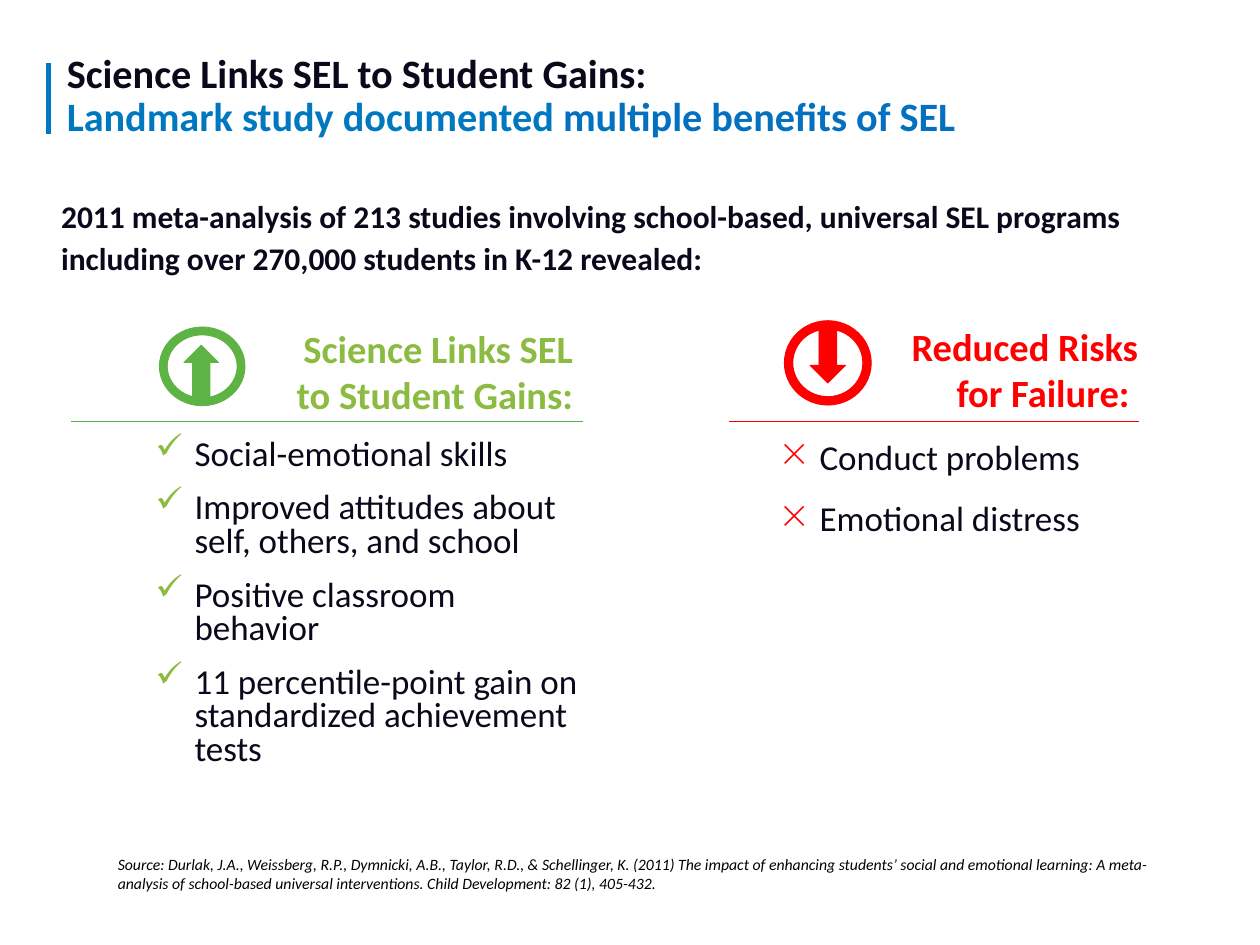
from pptx import Presentation
from pptx.dml.color import RGBColor
from pptx.enum.shapes import MSO_CONNECTOR, MSO_SHAPE
from pptx.enum.text import MSO_ANCHOR, MSO_AUTO_SIZE, PP_ALIGN
from pptx.oxml.ns import qn
from pptx.util import Inches, Pt
from lxml import etree

INK = RGBColor(0x0A, 0x09, 0x1B)
BLACK = RGBColor(0x00, 0x00, 0x00)
BLUE = RGBColor(0x00, 0x78, 0xC0)
BLUE_END = RGBColor(0x03, 0x70, 0xC0)
LIME = RGBColor(0x8B, 0xBC, 0x41)
GREEN = RGBColor(0x5E, 0xB3, 0x45)
RULE_GREEN = RGBColor(0x50, 0xB2, 0x4E)
RED = RGBColor(0xFF, 0x00, 0x00)

prs = Presentation()
prs.slide_width, prs.slide_height = Inches(20), Inches(15)
slide = prs.slides.add_slide(prs.slide_layouts[5])


def add_rule(x1, y1, x2, y2, color, width):
    rule = slide.shapes.add_connector(
        MSO_CONNECTOR.STRAIGHT, Inches(x1), Inches(y1), Inches(x2), Inches(y2))
    rule.line.color.rgb = color
    rule.line.width = Pt(width)
    etree.SubElement(rule._element.spPr, qn("a:effectLst"))


def style(font, size, color, bold=False, italic=False):
    font.name, font.size, font.color.rgb = "Calibri", Pt(size), color
    font.bold, font.italic = bold, italic


# Title with accent bar
add_rule(0.77, 1, 0.77, 2.13, BLUE, 5)
title = slide.shapes.title
title.left, title.top = Inches(0.96), Inches(0.83)
title.width, title.height = Inches(15.95), Inches(1.41)
title.text_frame.vertical_anchor = MSO_ANCHOR.MIDDLE
title.text_frame.auto_size = MSO_AUTO_SIZE.NONE
headline = title.text_frame.paragraphs[0]
headline.alignment = PP_ALIGN.LEFT
headline.line_spacing = 0.9
for text, color in [("Science Links SEL to Student Gains:", INK),
                    ("Landmark study documented ", BLUE),
                    ("multiple benefits of SEL", BLUE_END)]:
    run = headline.add_run()
    run.text = text
    style(run.font, 46, color, bold=True)
    if color == INK:
        headline.add_line_break()

# Introduction and source note
for left, top, width, height, text, size, color, bold, spacing in [
    (0.77, 2.97, 18.76, 1.57,
     "2011 meta-analysis of 213 studies involving school-based, universal SEL "
     "programs including over 270,000 students in K-12 revealed:",
     36, INK, True, 1.1),
    (1.67, 13.47, 17.48, 0.81,
     "Source: Durlak, J.A., Weissberg, R.P., Dymnicki, A.B., Taylor, R.D., & "
     "Schellinger, K. (2011) The impact of enhancing students’ social and "
     "emotional learning: A meta-analysis of school-based universal "
     "interventions. Child Development: 82 (1), 405-432.",
     18, BLACK, False, 1.0),
]:
    frame = slide.shapes.add_textbox(
        Inches(left), Inches(top), Inches(width), Inches(height)).text_frame
    frame.word_wrap = True
    frame.margin_left = frame.margin_right = Inches(0.2)
    frame.margin_top = frame.margin_bottom = Inches(0.1)
    statement = frame.paragraphs[0]
    statement.text = text
    statement.line_spacing = spacing
    style(statement.font, size, color, bold=bold, italic=not bold)

# Findings: heading lines, then bulleted points (gaps in points)
for box, heading, points, mark, color, first_gap, gap in [
    ((2.34, 5.11, 7, 6.35),
     ["Science Links SEL ", "to Student Gains: "],
     ["Social-emotional skills",
      "Improved attitudes about self, others, and school",
      "Positive classroom behavior",
      "11 percentile-point gain on standardized achievement tests"],
     "✓", LIME, 25, 23),
    ((12.26, 5.08, 5.91, 4.32),
     ["Reduced Risks", "for Failure: "],
     ["Conduct problems", "Emotional distress"],
     "×", RED, 32, 32),
]:
    frame = slide.shapes.add_textbox(*map(Inches, box)).text_frame
    frame.word_wrap = True
    for i, text in enumerate(heading + points):
        line = frame.paragraphs[0] if i == 0 else frame.add_paragraph()
        line.text = text
        if i < len(heading):
            line.alignment = PP_ALIGN.RIGHT
            style(line.font, 44, color, bold=True)
            continue
        line.line_spacing = 0.8
        line.space_before = Pt(first_gap if i == len(heading) else gap)
        props = line._p.get_or_add_pPr()
        props.set("marL", str(Inches(0.65)))
        props.set("indent", str(Inches(-0.62)))
        bullet_color = etree.SubElement(props, qn("a:buClr"))
        etree.SubElement(bullet_color, qn("a:srgbClr"), val=str(color))
        etree.SubElement(props, qn("a:buChar"), char=mark)
        style(line.font, 40, INK)

# Rules under the headings
add_rule(1.12, 6.68, 9.25, 6.68, RULE_GREEN, 0.5)
add_rule(11.57, 6.68, 18.08, 6.68, RED, 0.5)

# Ringed arrow icons
for color, ring_box, arrow_kind, arrow_box in [
    (GREEN, (2.53, 5.19, 1.36, 1.25), MSO_SHAPE.UP_ARROW, (2.92, 5.48, 0.55, 0.83)),
    (RED, (12.45, 5.09, 1.38, 1.34), MSO_SHAPE.DOWN_ARROW, (12.86, 5.19, 0.56, 0.89)),
]:
    icon = slide.shapes.add_group_shape()
    ring = icon.shapes.add_shape(MSO_SHAPE.DONUT, *map(Inches, ring_box))
    ring.adjustments[0] = 0.1
    arrow = icon.shapes.add_shape(arrow_kind, *map(Inches, arrow_box))
    for part in (ring, arrow):
        part.shadow.inherit = False
        part.fill.solid()
        part.fill.fore_color.rgb = color
        part.line.color.rgb = color
        part.line.width = Pt(1)

prs.save("out.pptx")
